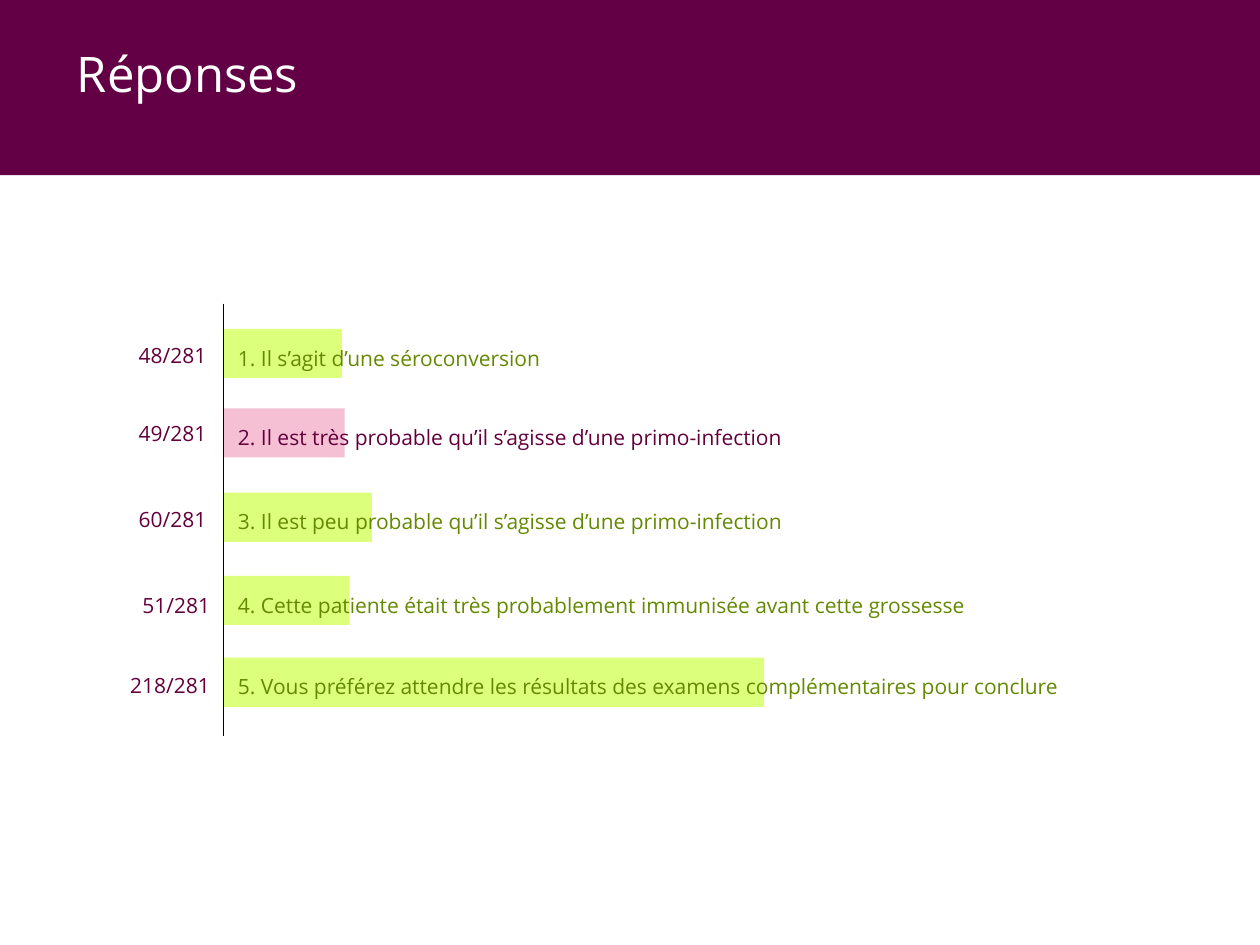
from lxml.etree import SubElement
from pptx import Presentation
from pptx.dml.color import RGBColor
from pptx.enum.shapes import MSO_CONNECTOR, MSO_SHAPE
from pptx.enum.text import MSO_ANCHOR, MSO_AUTO_SIZE, PP_ALIGN
from pptx.oxml.ns import qn
from pptx.util import Inches, Pt

FONT = "Open Sans"
BAND, PLUM, OLIVE = "630045", "63003C", "648900"
LIME, PINK = "DCFF7C", "F5C0D4"
BAR_HEIGHT, WIDTH_PER_VOTE = 0.39, 0.0197
TOTAL_VOTES = 281

# votes, answer, bar top, count left, count top, bar colour, answer colour
ANSWERS = [
    (48, "1. Il s’agit d’une séroconversion", 0.2, 0, 0.23, LIME, OLIVE),
    (49, "2. Il est très probable qu’il s’agisse d’une primo-infection", 0.83, 0, 0.85, PINK, PLUM),
    (60, "3. Il est peu probable qu’il s’agisse d’une primo-infection", 1.5, 0, 1.53, LIME, OLIVE),
    (51, "4. Cette patiente était très probablement immunisée avant cette grossesse", 2.16, 0.03, 2.21, LIME, OLIVE),
    (218, "5. Vous préférez attendre les résultats des examens complémentaires pour conclure", 2.81, -0.02, 2.85, LIME, OLIVE),
]


def rgb(hex_colour):
    """Return the colour for a hex string."""
    return RGBColor.from_string(hex_colour)


def box(left, top, width, height):
    """Return a box in slide units from inches."""
    return [Inches(length) for length in (left, top, width, height)]


def style(paragraph, size, colour, align, spacing):
    """Format one paragraph."""
    paragraph.alignment = align
    paragraph.line_spacing = spacing
    paragraph.font.name = FONT
    paragraph.font.size = Pt(size)
    paragraph.font.color.rgb = rgb(colour)


def add_bar(slide, left, top, width, height, colour):
    """Add a plain filled rectangle and return it."""
    bar = slide.shapes.add_shape(MSO_SHAPE.RECTANGLE, *box(left, top, width, height))
    bar.shadow.inherit = False
    bar.fill.solid()
    bar.fill.fore_color.rgb = rgb(colour)
    bar.line.fill.background()
    return bar


def add_label(slide, left, top, width, text, colour, align):
    """Add a one-line label."""
    frame = slide.shapes.add_textbox(*box(left, top, width, 0.32)).text_frame
    frame.word_wrap = True
    frame.auto_size = MSO_AUTO_SIZE.SHAPE_TO_FIT_TEXT
    paragraph = frame.paragraphs[0]
    paragraph.text = text
    style(paragraph, 12, colour, align, 1.15)
    paragraph.space_after = Pt(12)


def add_header(slide, left, top, width, height):
    """Place the title over a coloured band."""
    title = slide.shapes.title
    band = add_bar(slide, left, top, width, height, BAND)
    title.element.addprevious(band.element)
    title.left, title.top, title.width, title.height = box(left + 0.51, top + 0.3, 8.35, 0.61)
    frame = title.text_frame
    frame.text = "Réponses"
    frame.auto_size = MSO_AUTO_SIZE.NONE
    frame.vertical_anchor = MSO_ANCHOR.MIDDLE
    style(frame.paragraphs[0], 28, "FFFFFF", PP_ALIGN.LEFT, 0.9)


def add_axis(slide, x, top, height):
    """Draw the vertical line from which the bars start."""
    axis = slide.shapes.add_connector(
        MSO_CONNECTOR.STRAIGHT, Inches(x), Inches(top), Inches(x), Inches(top + height))
    axis.line.color.rgb = rgb("000000")
    axis.line.width = Pt(0.5)
    SubElement(axis.element.spPr, qn("a:effectLst"))


def add_results(slide, left, top, width, height):
    """Draw the vote bars with their counts and answers."""
    axis_x = left + 0.82
    for votes, _, bar_top, _, _, bar_colour, _ in ANSWERS:
        add_bar(slide, axis_x, top + bar_top, votes * WIDTH_PER_VOTE, BAR_HEIGHT, bar_colour)
    add_axis(slide, axis_x, top, height)
    answer_left = axis_x + 0.02
    for votes, answer, bar_top, count_left, count_top, _, colour in ANSWERS:
        add_label(slide, answer_left, top + bar_top + 0.05, left + width - answer_left,
                  answer, colour, PP_ALIGN.JUSTIFY)
        add_label(slide, left + count_left, top + count_top, 0.84,
                  f"{votes}/{TOTAL_VOTES}", PLUM, PP_ALIGN.CENTER)


def main():
    """Build and save the slide."""
    deck = Presentation()
    deck.slide_width, deck.slide_height = Inches(10), Inches(7.5)
    slide = deck.slides.add_slide(deck.slide_layouts[5])
    add_header(slide, 0, 0, 10, 1.39)
    add_results(slide, 0.95, 2.41, 8.22, 3.43)
    deck.save("out.pptx")


if __name__ == "__main__":
    main()
